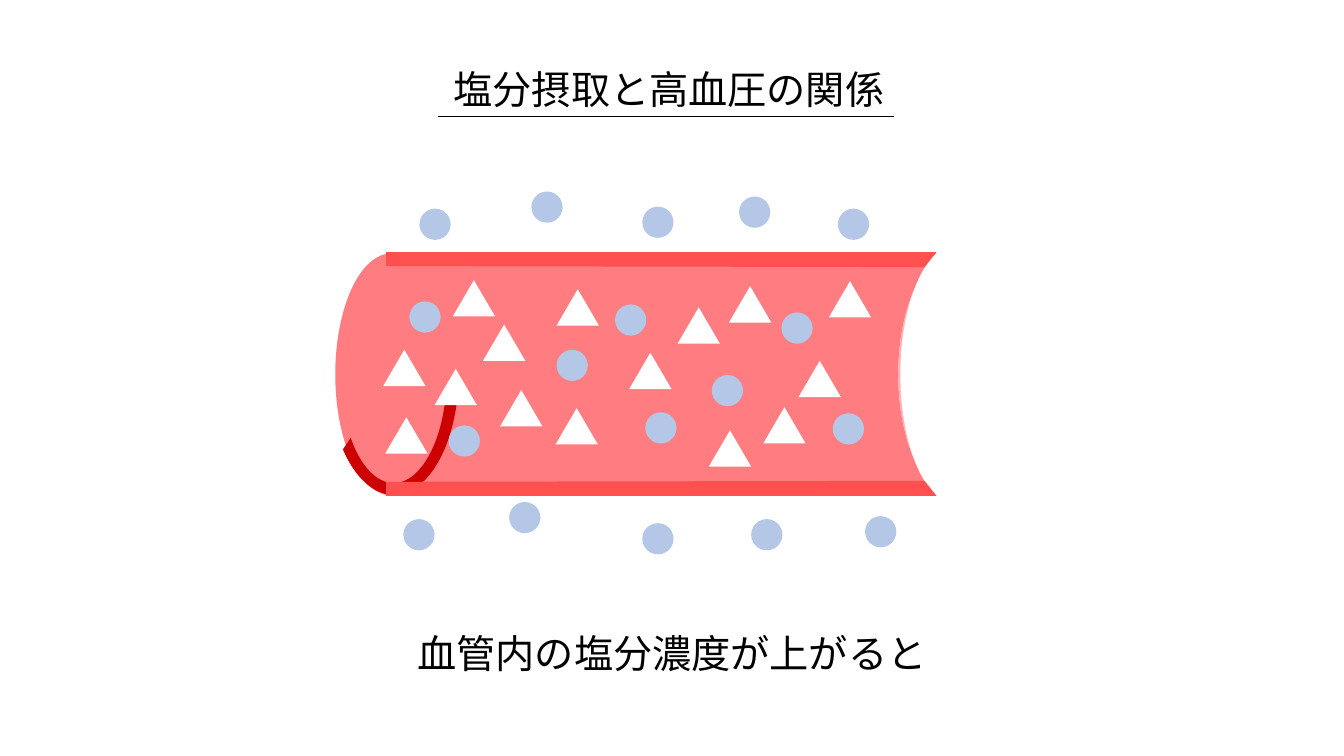
from dataclasses import dataclass

from lxml.etree import SubElement
from pptx import Presentation
from pptx.dml.color import RGBColor
from pptx.enum.shapes import MSO_CONNECTOR, MSO_SHAPE
from pptx.enum.text import MSO_AUTO_SIZE, PP_ALIGN
from pptx.oxml.ns import qn
from pptx.shapes.autoshape import Shape
from pptx.shapes.shapetree import GroupShapes, SlideShapes
from pptx.util import Inches, Pt

FONT = "Noto Sans CJK JP"
BLACK = RGBColor(0x00, 0x00, 0x00)
WHITE = RGBColor(0xFF, 0xFF, 0xFF)
LUMEN_PINK = RGBColor(0xFF, 0x7C, 0x80)
WALL_RED = RGBColor(0xFF, 0x50, 0x50)
RIM_RED = RGBColor(0xCC, 0x00, 0x00)
WATER_BLUE = RGBColor(0xB4, 0xC7, 0xE7)


@dataclass(frozen=True)
class Particle:
    kind: MSO_SHAPE
    width: float
    height: float
    color: RGBColor


@dataclass(frozen=True)
class Caption:
    text: str
    left: float
    top: float
    width: float
    align: PP_ALIGN


@dataclass(frozen=True)
class Wall:
    outer_y: float
    inner_y: float
    tip_y: float


WATER = Particle(MSO_SHAPE.OVAL, 0.31, 0.31, WATER_BLUE)
SALT = Particle(MSO_SHAPE.ISOSCELES_TRIANGLE, 0.42, 0.36, WHITE)

TITLE = Caption("塩分摂取と高血圧の関係", 4.4, 0.6, 4.52, PP_ALIGN.LEFT)
MESSAGE = Caption("血管内の塩分濃度が上がると", 4.01, 6.19, 5.31, PP_ALIGN.CENTER)

UPPER_WALL = Wall(2.5, 2.64, 2.65)
LOWER_WALL = Wall(4.92, 4.78, 4.77)

WATER_INSIDE = [
    (4.06, 2.99), (4.45, 4.22), (5.52, 3.47), (6.4, 4.09),
    (6.1, 3.02), (7.06, 3.72), (7.75, 3.1), (8.26, 4.1),
]
WATER_OUTSIDE = [
    (4.16, 2.07), (5.27, 1.9), (6.37, 2.05), (7.33, 1.95), (8.31, 2.07),
    (4, 5.15), (5.05, 4.98), (6.37, 5.19), (7.45, 5.15), (8.58, 5.12),
]
SALT_INITIAL = [(4.79, 3.22), (5.51, 4.05), (6.72, 3.05), (7.57, 4.04)]
SALT_ADDED = [
    (3.8, 3.47), (4.96, 3.87), (5.52, 2.87), (6.24, 3.5),
    (7.23, 2.84), (7.92, 3.58), (7.03, 4.27), (8.22, 2.79),
    (4.31, 3.66), (4.49, 2.78), (3.82, 4.14),
]


def paint(shape: Shape, color: RGBColor) -> None:
    shape.shadow.inherit = False
    shape.fill.solid()
    shape.fill.fore_color.rgb = color
    shape.line.fill.background()


def add_solid(shapes: SlideShapes | GroupShapes, kind: MSO_SHAPE, left: float,
              top: float, width: float, height: float, color: RGBColor) -> Shape:
    solid = shapes.add_shape(
        kind, Inches(left), Inches(top), Inches(width), Inches(height))
    paint(solid, color)
    return solid


def scatter(shapes: SlideShapes | GroupShapes, particle: Particle,
            places: list[tuple[float, float]]) -> None:
    for left, top in places:
        add_solid(shapes, particle.kind, left, top,
                  particle.width, particle.height, particle.color)


def add_wall(shapes: GroupShapes, wall: Wall) -> None:
    outline = shapes.build_freeform(Inches(3.83), Inches(wall.outer_y))
    corners = [(9.29, wall.outer_y), (9.17, wall.tip_y), (3.83, wall.inner_y)]
    outline.add_line_segments([(Inches(x), Inches(y)) for x, y in corners])
    paint(outline.convert_to_shape(), WALL_RED)


def add_vessel(shapes: GroupShapes) -> None:
    lumen = add_solid(shapes, MSO_SHAPE.CAN, 5.47, 0.37, 2.4, 6.69, LUMEN_PINK)
    lumen.rotation = 90
    lumen.adjustments[0] = 0.461
    add_solid(shapes, MSO_SHAPE.OVAL, 8.93, 2.41, 1.16, 2.61, WHITE)
    add_wall(shapes, UPPER_WALL)
    rim = add_solid(shapes, MSO_SHAPE.BLOCK_ARC, 2.7, 3.06, 2.41, 1.29, RIM_RED)
    rim.rotation = 270
    units_per_degree = 0.6
    rim.adjustments[0] = 110.258 * units_per_degree
    rim.adjustments[1] = 213.731 * units_per_degree
    rim.adjustments[2] = 0.091
    add_wall(shapes, LOWER_WALL)


def add_caption(shapes: SlideShapes, caption: Caption) -> None:
    box = shapes.add_textbox(Inches(caption.left), Inches(caption.top),
                             Inches(caption.width), Inches(0.57))
    frame = box.text_frame
    frame.word_wrap = False
    frame.auto_size = MSO_AUTO_SIZE.SHAPE_TO_FIT_TEXT
    paragraph = frame.paragraphs[0]
    paragraph.alignment = caption.align
    run = paragraph.add_run()
    run.text = caption.text
    run.font.size = Pt(28)
    run.font.name = FONT
    run.font.color.rgb = BLACK
    SubElement(run.font._element, qn("a:ea"), typeface=FONT)


def add_title_rule(shapes: SlideShapes) -> None:
    rule = shapes.add_connector(MSO_CONNECTOR.STRAIGHT, Inches(4.34), Inches(1.15),
                                Inches(8.87), Inches(1.15))
    rule.line.color.rgb = BLACK
    rule.line.width = Pt(0.5)
    SubElement(rule._element.spPr, qn("a:effectLst"))


def main() -> None:
    presentation = Presentation()
    presentation.slide_width = Inches(13.33)
    presentation.slide_height = Inches(7.5)
    slide = presentation.slides.add_slide(presentation.slide_layouts[6])

    add_caption(slide.shapes, TITLE)
    add_title_rule(slide.shapes)
    diagram = slide.shapes.add_group_shape().shapes
    add_vessel(diagram)
    scatter(diagram, WATER, WATER_INSIDE)
    scatter(diagram, SALT, SALT_INITIAL)
    scatter(diagram, WATER, WATER_OUTSIDE)
    add_caption(slide.shapes, MESSAGE)
    scatter(slide.shapes, SALT, SALT_ADDED)

    presentation.save("out.pptx")


if __name__ == "__main__":
    main()
